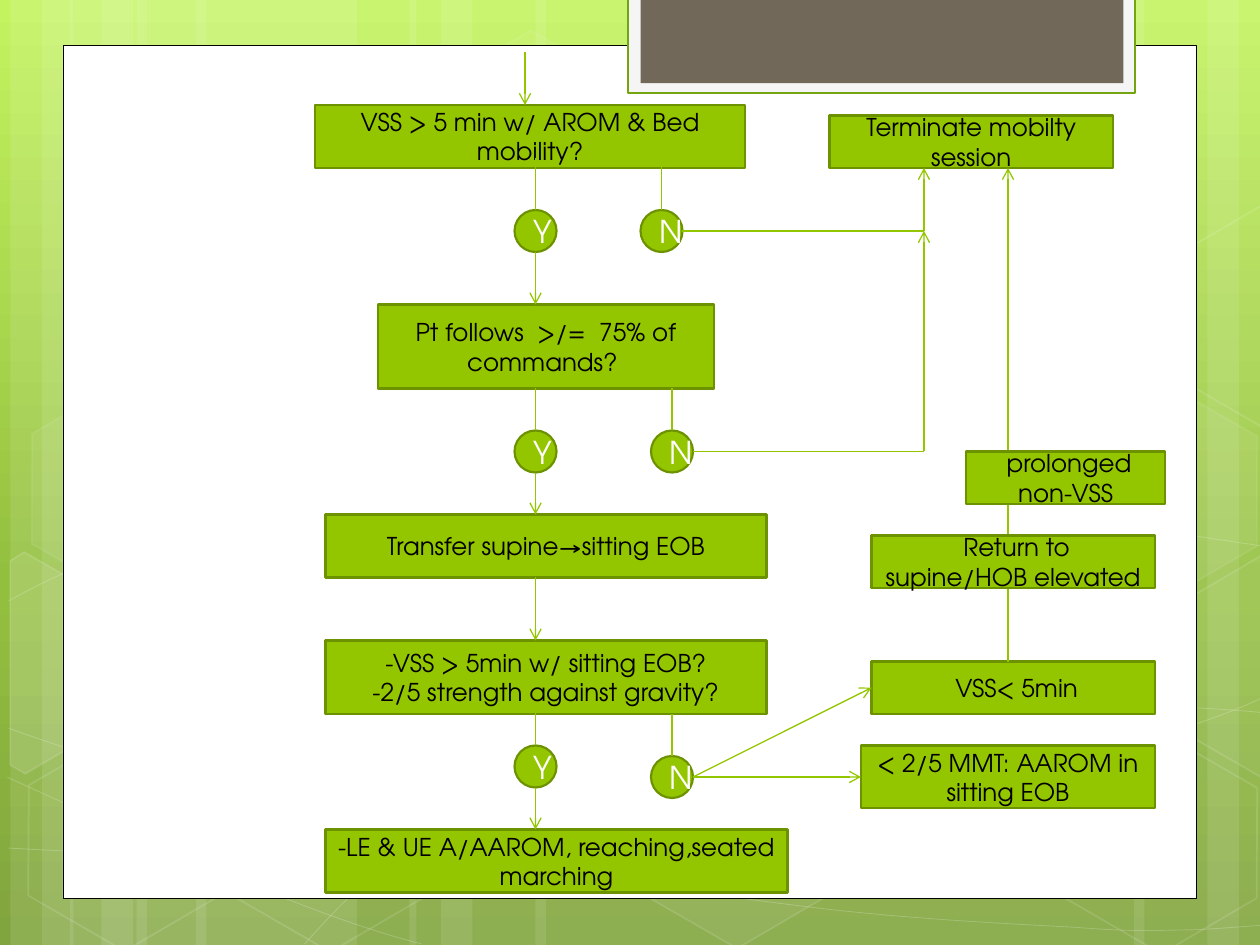
from math import cos, radians, sin

from lxml import etree
from pptx import Presentation
from pptx.dml.color import RGBColor
from pptx.enum.shapes import MSO_CONNECTOR as Link, MSO_SHAPE as Kind
from pptx.enum.text import MSO_ANCHOR as Anchor, PP_ALIGN as Align
from pptx.oxml.ns import qn
from pptx.util import Pt

FONT = "TeX Gyre Adventor"
WHITE, GREEN, DARK_GREEN = "FFFFFF", "94C600", "6D9200"


def set_color(fill, color, solid_parent, opacity=100):
    """Solid colour; solid_parent is the XML element that holds the fill."""
    fill.solid()
    fill.fore_color.rgb = RGBColor.from_string(color)
    if opacity < 100:
        swatch = solid_parent.find(qn("a:solidFill")).find(qn("a:srgbClr"))
        etree.SubElement(swatch, qn("a:alpha")).set("val", str(opacity * 1000))


def style(shape, fill=None, line=None, width=1, fill_opacity=100, line_opacity=100):
    properties = shape.element.spPr
    shape.shadow.inherit = False
    if fill:
        set_color(shape.fill, fill, properties, fill_opacity)
    else:
        shape.fill.background()
    if line:
        shape.line.width = Pt(width)
        set_color(shape.line.fill, line, properties.find(qn("a:ln")), line_opacity)
    else:
        shape.line.fill.background()


deck = Presentation()
deck.slide_width, deck.slide_height = Pt(720), Pt(540)
page = deck.slides.add_slide(deck.slide_layouts[6])
shapes = page.shapes

# Background gradient, light at the top
backdrop = page.background.fill
backdrop.gradient()
backdrop.gradient_angle = 270
stop_list = page.element.cSld.find(".//" + qn("a:gsLst"))
for stop in list(stop_list):
    stop_list.remove(stop)
for position, color in [(0, "C3F35F"), (62, "93BF3F"), (100, "81A53E")]:
    stop = etree.SubElement(stop_list, qn("a:gs"), pos=str(position * 1000))
    etree.SubElement(stop, qn("a:srgbClr"), val=color)

# Translucent vertical stripes: left, width
stripes = [(78, 126), (6, 36), (24, 60), (112, 126), (40, 36), (58, 60),
           (528, 126), (690, 36), (648, 60), (306, 222), (234, 36), (252, 60)]
for left, width in stripes:
    stripe = shapes.add_shape(Kind.RECTANGLE, Pt(left), 0, Pt(width), Pt(540))
    style(stripe, WHITE, fill_opacity=10)

# Faint waves: a start point, then Bezier segments (two controls and an end)
waves = [
    [(5, 484.6), (43.9, 486.7), (82.8, 488.9), (136.8, 488.2),
     (190.8, 487.4), (257.8, 486), (329.8, 478.8),
     (401.8, 471.6), (504, 457.9), (570.2, 444.2),
     (635.8, 430.6), (703.4, 409), (725, 396.7)],
    [(5, 343.4), (25.9, 331.9), (46.8, 321.1), (87.1, 310.3),
     (128.2, 299.5), (186.5, 283.7), (249.8, 278.6),
     (313.9, 273.6), (391.7, 272.9), (470.9, 278.6),
     (550.1, 284.4), (681.8, 306.7), (725, 312.5)],
    [(4.3, 444.2), (91.4, 483.8), (177.8, 523.4), (240.5, 539.3)],
    [(5, 416.2), (27.4, 424.1), (50.4, 432), (92.2, 443.5),
     (133.9, 454.3), (196.6, 472.3), (257, 484.6),
     (316.8, 496.8), (392.4, 509.8), (452.2, 517),
     (511.9, 524.9), (576, 527.8), (614.2, 529.9),
     (651.6, 532.8), (661.7, 531.4), (680.4, 531.4),
     (699.1, 530.6), (712.1, 529.2), (725, 528.5)],
    [(174.2, 539.3), (187.2, 524.9), (200.2, 510.5), (217.4, 497.5),
     (234.7, 484.6), (259.2, 470.2), (279.4, 460.1),
     (299.5, 450), (311.8, 445.7), (338.4, 438.5),
     (364.3, 431.3), (412.6, 421.2), (437.8, 416.2),
     (463.7, 411.1), (467.3, 411.1), (489.6, 409.7),
     (511.9, 407.5), (547.2, 405.4), (571.7, 404.6),
     (596.9, 403.9), (637.9, 404.6), (686.2, 404.6),
     (699.1, 405.4), (711.4, 406.1), (724.3, 407.5)],
]
for wave in waves:
    start, *others = [(Pt(x), Pt(y)) for x, y in wave]
    outline = shapes.build_freeform(*start)
    outline.add_line_segments(others, close=False)
    curve = outline.convert_to_shape()
    style(curve, line=WHITE, width=0.5, line_opacity=20)
    # Turn every three straight segments into one Bezier segment
    segments = list(curve.element.iter(qn("a:lnTo")))
    track = segments[0].getparent()
    for first in range(0, len(segments), 3):
        bezier = etree.SubElement(track, qn("a:cubicBezTo"))
        for segment in segments[first:first + 3]:
            bezier.append(segment[0])
            track.remove(segment)

# Hexagons: left, top, fill opacity, line opacity
hexagons = [(240.5, 26, 4, 8), (358, 424, 6, 12), (8, 425.5, 0, 12),
            (10, 224.5, 7, 8), (125.5, 426, 0, 12), (542, 326, 10, 12),
            (600.5, 427, 0, 12), (600.5, 226, 7, 8)]
for left, top, fill_opacity, line_opacity in hexagons:
    hexagon = shapes.add_shape(Kind.HEXAGON, Pt(left), Pt(top), Pt(126), Pt(109.5))
    hexagon.adjustments[0] = 0.285
    hexagon.rotation = 30
    style(hexagon, WHITE if fill_opacity else None, WHITE, 1, fill_opacity, line_opacity)

# Hexagons cut off by the page edges: fill opacity, pivot, corners as seen when turned
cut_hexagons = [
    (10, (25.9, 385.2), [(5.8, 320.4), (13.7, 315.4), (69.1, 347), (68.4, 410.4),
                         (14.4, 442.1), (5.8, 437)]),
    (4, (709.2, 374.4), [(666.7, 349.2), (720.7, 317.5), (726.5, 321.1), (726.5, 441.4),
                         (721.4, 444.2), (666.7, 412.6)]),
    (0, (709.2, 173.5), [(666.7, 149), (720.7, 117.4), (727.2, 121), (726.5, 241.2),
                         (721.4, 244.1), (666.7, 212.4)]),
]
cosine, sine = cos(radians(30)), sin(radians(30))
for fill_opacity, (pivot_x, pivot_y), corners in cut_hexagons:
    offsets = [(x - pivot_x, y - pivot_y) for x, y in corners]
    start, *others = [(Pt(pivot_x + x * cosine + y * sine), Pt(pivot_y - x * sine + y * cosine))
                      for x, y in offsets]
    outline = shapes.build_freeform(*start)
    outline.add_line_segments(others, close=True)
    cut_hexagon = outline.convert_to_shape()
    cut_hexagon.rotation = 30
    style(cut_hexagon, WHITE if fill_opacity else None, WHITE, 1, fill_opacity, 12)

# White panel and header tab
for left, top, width, height, fill, line, weight in [
        (36, 26, 648, 487.2, WHITE, "000000", 0.5),
        (359, -1.5, 289.5, 54.7, "F5F5F5", "74A510", 1.25),
        (366, -1.5, 276, 49, "71685A", None, 0)]:
    panel = shapes.add_shape(Kind.RECTANGLE, Pt(left), Pt(top), Pt(width), Pt(height))
    style(panel, fill, line, weight)

# Flowchart steps, and the yes/no circles
steps = [
    (180, 60, 246, 36, ["VSS > 5 min w/ AROM & Bed mobility?"]),
    (216, 174, 192, 48, ["Pt follows  >/=  75% of commands? "]),
    (186, 294, 252, 36, ["Transfer supine→sitting EOB"]),
    (186, 366, 252, 42, ["-VSS > 5min w/ sitting EOB?", "-2/5 strength against gravity?"]),
    (186, 474, 264, 36, ["-LE & UE A/AAROM, reaching,seated marching"]),
    (474, 66, 162, 30, ["Terminate mobilty session"]),
    (498, 378, 162, 30, [" VSS< 5min"]),
    (492, 426, 168, 36, ["< 2/5 MMT: AAROM in sitting EOB"]),
    (498, 306, 162, 30, [" Return to supine/HOB elevated"]),
    (552, 258, 114, 30, [" prolonged non-VSS"]),
]
answers = [(294, 120, "Y"), (366, 120, "N"), (294, 246, "Y"),
           (372, 246, "N"), (294, 426, "Y"), (372, 432, "N")]
nodes = [(Kind.OVAL, left, top, 24, 24, [letter], 18, WHITE) for left, top, letter in answers]
nodes += [(Kind.RECTANGLE, *step, 14, "000000") for step in steps]
boxes = []
for kind, left, top, width, height, lines, size, color in nodes:
    box = shapes.add_shape(kind, Pt(left), Pt(top), Pt(width), Pt(height))
    boxes.append(box)
    style(box, GREEN, DARK_GREEN, 1.25)
    frame = box.text_frame
    frame.word_wrap = True
    frame.vertical_anchor = Anchor.MIDDLE
    for index, text in enumerate(lines):
        para = frame.add_paragraph() if index else frame.paragraphs[0]
        para.alignment = Align.CENTER
        span = para.add_run()
        span.text = text
        span.font.name = FONT
        span.font.size = Pt(size)
        span.font.color.rgb = RGBColor.from_string(color)

# Connectors: start, end, arrowhead
connectors = [
    (300, 30, 300, 60, True), (306, 90, 306, 120, False), (306, 144, 306, 174, True),
    (378, 90, 378, 120, False), (306, 222, 306, 246, False), (306, 270, 306, 294, True),
    (384, 222, 384, 246, False), (306, 330, 306, 366, True), (306, 402, 306, 426, False),
    (306, 450, 306, 474, True), (384, 408, 384, 432, False), (390, 132, 528, 132, False),
    (528, 132, 528, 96, True), (396, 258, 528, 258, False), (528, 258, 528, 132, True),
    (396, 444, 498, 393, True), (396, 444, 492, 444, True), (576, 378, 576, 96, True),
]
for x1, y1, x2, y2, arrow in connectors:
    connector = shapes.add_connector(Link.STRAIGHT, Pt(x1), Pt(y1), Pt(x2), Pt(y2))
    connector.line.width = Pt(0.75)
    properties = connector.element.spPr
    edge = properties.find(qn("a:ln"))
    set_color(connector.line.fill, GREEN, edge)
    if arrow:
        etree.SubElement(edge, qn("a:tailEnd"), type="arrow")
    etree.SubElement(properties, qn("a:effectLst"))

# The last two boxes lie over the long arrow
for box in boxes[-2:]:
    box.element.getparent().append(box.element)

deck.save("out.pptx")
